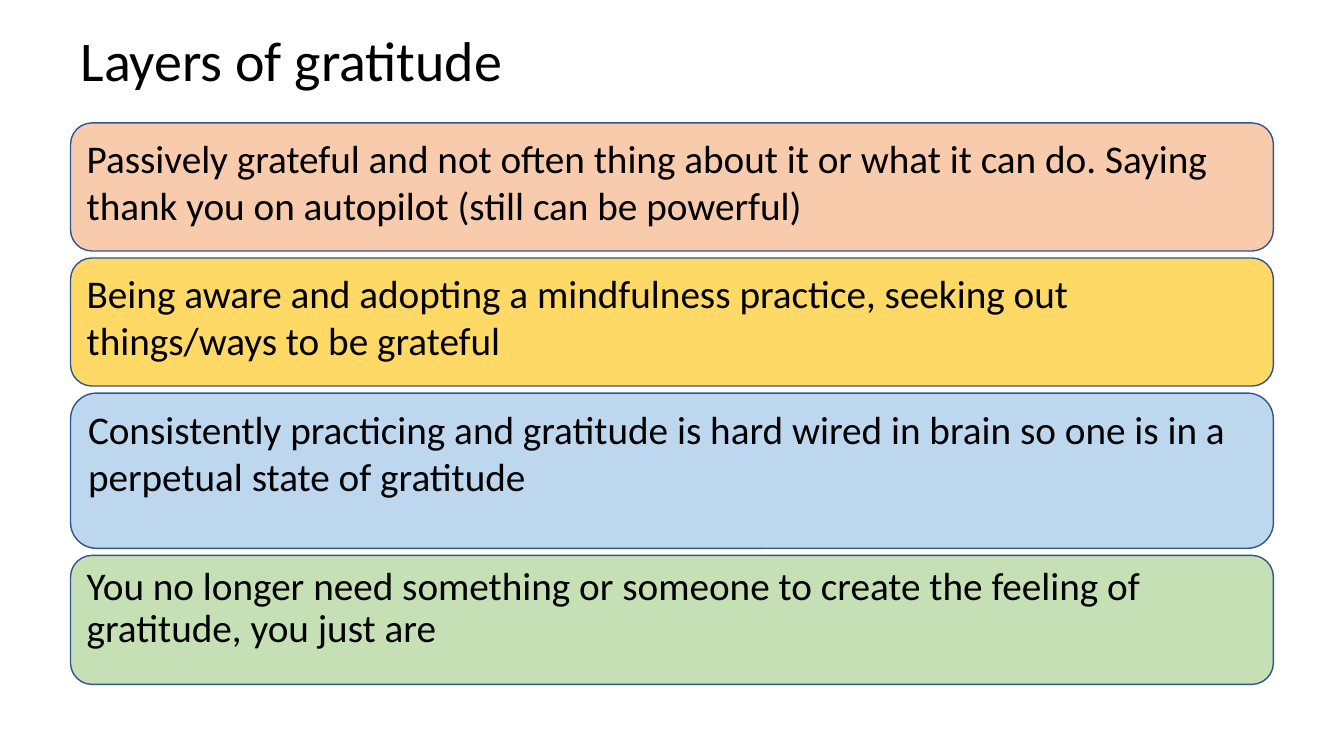
from pptx import Presentation
from pptx.dml.color import RGBColor
from pptx.enum.shapes import MSO_SHAPE
from pptx.enum.text import MSO_ANCHOR, PP_ALIGN
from pptx.util import Inches, Pt


def write_text(shape, text, size, anchor, **paragraph_format):
    frame = shape.text_frame
    frame.word_wrap = True
    frame.vertical_anchor = anchor
    paragraph = frame.paragraphs[0]
    paragraph.text = text
    paragraph.alignment = PP_ALIGN.LEFT
    for name, value in paragraph_format.items():
        setattr(paragraph, name, value)
    font = paragraph.runs[0].font
    font.name = "Calibri"
    font.size = Pt(size)
    font.color.rgb = RGBColor.from_string("000000")


presentation = Presentation()
presentation.slide_width = Inches(13.33)
presentation.slide_height = Inches(7.5)
slide = presentation.slides.add_slide(presentation.slide_layouts[5])

LEFT = 0.7
title = slide.shapes.title
title.left, title.top = Inches(LEFT), Inches(-0.1)
title.width, title.height = Inches(11.5), Inches(1.45)
write_text(title, "Layers of gratitude", 40, MSO_ANCHOR.MIDDLE, line_spacing=0.9)

# Fill, height, line spacing, text
layers = [
    ("F8CBAD", 1.27, 1.0, "Passively grateful and not often thing about it or what it can do. "
     "Saying thank you on autopilot (still can be powerful)"),
    ("FFD966", 1.27, 1.0, "Being aware and adopting a mindfulness practice, "
     "seeking out things/ways to be grateful"),
    ("BDD7EE", 1.54, 1.0, "Consistently practicing and gratitude is hard wired in brain "
     "so one is in a perpetual state of gratitude"),
    ("C5E0B4", 1.28, 0.9, "You no longer need something or someone to create "
     "the feeling of gratitude, you just are"),
]
GAP = 0.07
top = 1.22
for fill, height, line_spacing, text in layers:
    layer = slide.shapes.add_shape(
        MSO_SHAPE.ROUNDED_RECTANGLE, Inches(LEFT), Inches(top), Inches(11.93), Inches(height))
    layer.shadow.inherit = False
    layer.fill.solid()
    layer.fill.fore_color.rgb = RGBColor.from_string(fill)
    layer.line.color.rgb = RGBColor.from_string("325491")
    layer.line.width = Pt(1)
    write_text(layer, text, 28, MSO_ANCHOR.TOP, line_spacing=line_spacing, space_after=Pt(6))
    top += height + GAP

presentation.save("out.pptx")
